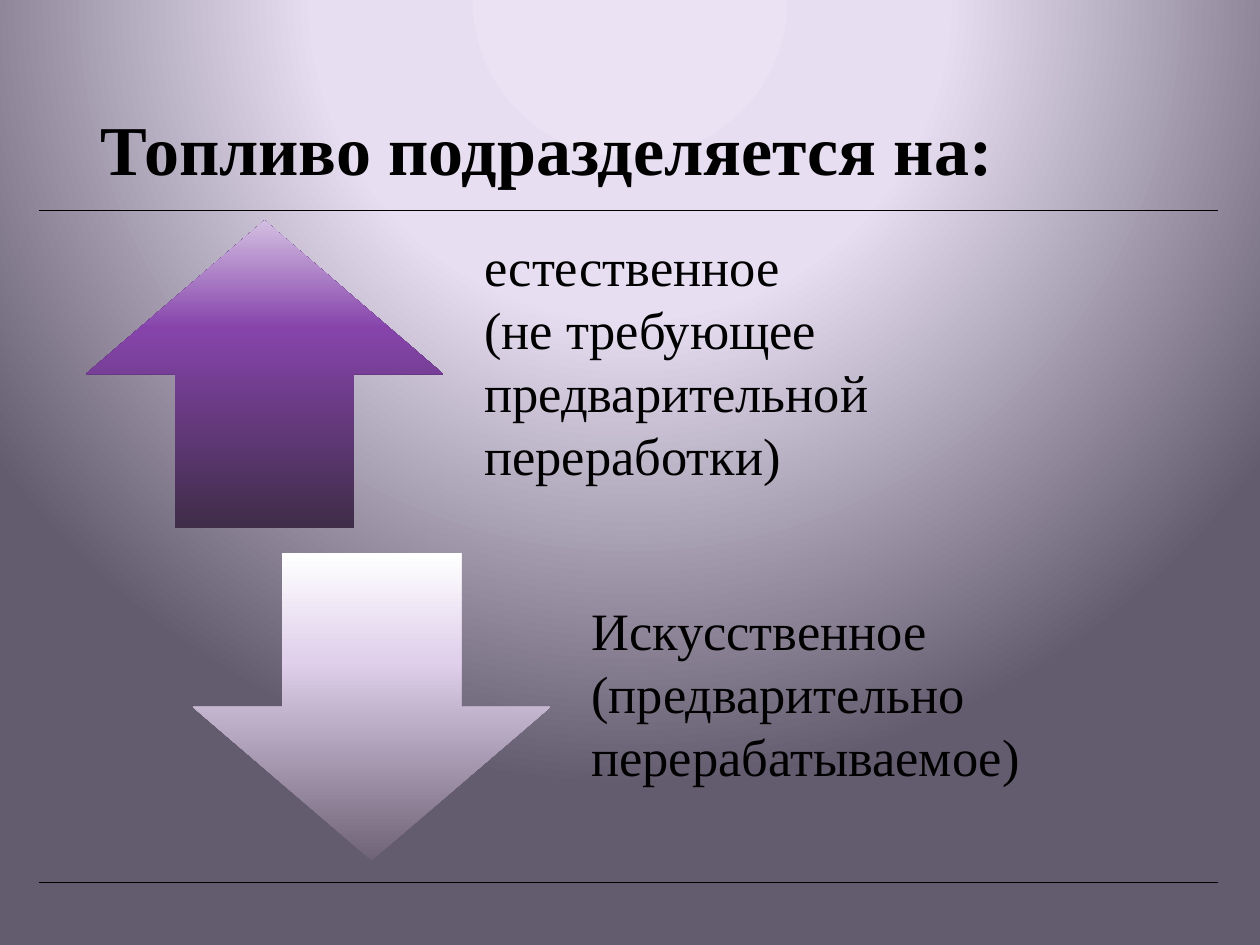
import dataclasses

import pptx
import pptx.dml.color
import pptx.enum.shapes
import pptx.enum.text
import pptx.oxml
import pptx.oxml.ns
import pptx.util

COLUMNS, ROWS = 100, 75
CELL = pptx.util.Inches(0.1)
ARROWS = pptx.enum.shapes.MSO_SHAPE
ANCHORS = pptx.enum.text.MSO_ANCHOR


@dataclasses.dataclass(frozen=True)
class Theme:
    font: str = "Times New Roman"
    ink: str = "000000"
    title_size: float = 40
    body_size: float = 30
    body_leading: float = 36
    rule_width: float = 0.25
    backdrop: tuple = ((0, "EBE3F4"), (40, "E7DEF2"), (100, "635B6E"))
    natural: tuple = ((0, "3F2D49"), (65, "8644AB"), (100, "D3BEE1"))
    artificial: tuple = ((0, "6F6377"), (65, "E0D0EB"), (100, "FFFFFF"))


@dataclasses.dataclass(frozen=True)
class Box:
    left: float
    top: float
    width: float
    height: float

    def columns(self, start, share):
        return Box(self.left + start * self.width, self.top, share * self.width, self.height)

    def emu(self):
        return [round(n * CELL) for n in (self.left, self.top, self.width, self.height)]


THEME = Theme()


def gradient_xml(stops, direction):
    colours = "".join(
        f'<a:gs pos="{share * 1000}"><a:srgbClr val="{colour}"/></a:gs>'
        for share, colour in stops
    )
    return (
        f'<a:gradFill {pptx.oxml.ns.nsdecls("a")} rotWithShape="1">'
        f"<a:gsLst>{colours}</a:gsLst>{direction}</a:gradFill>"
    )


def paint_backdrop(slide):
    glow = (
        '<a:path path="circle">'
        '<a:fillToRect l="50000" t="-80000" r="50000" b="180000"/></a:path>'
    )
    backdrop = pptx.oxml.parse_xml(
        f'<p:bg {pptx.oxml.ns.nsdecls("p", "a")}><p:bgPr>'
        f"{gradient_xml(THEME.backdrop, glow)}<a:effectLst/></p:bgPr></p:bg>"
    )
    slide.element.cSld.insert(0, backdrop)


def add_rules(shapes, frame):
    left, top, width, height = frame.emu()
    for level in (top, top + height):
        rule = shapes.add_connector(
            pptx.enum.shapes.MSO_CONNECTOR.STRAIGHT, left, level, left + width, level
        )
        rule.line.color.rgb = pptx.dml.color.RGBColor.from_string(THEME.ink)
        rule.line.width = pptx.util.Pt(THEME.rule_width)
        rule.element.spPr.append(
            pptx.oxml.parse_xml(f'<a:effectLst {pptx.oxml.ns.nsdecls("a")}/>')
        )


def add_text(shapes, box, lines, size, anchor, bold=False, leading=None):
    frame = shapes.add_textbox(*box.emu()).text_frame
    frame.word_wrap = True
    frame.vertical_anchor = anchor
    for index, line in enumerate(lines):
        paragraph = frame.add_paragraph() if index else frame.paragraphs[0]
        if leading:
            paragraph.line_spacing = pptx.util.Pt(leading)
        run = paragraph.add_run()
        run.text = line
        run.font.name = THEME.font
        run.font.size = pptx.util.Pt(size)
        run.font.bold = bold
        run.font.color.rgb = pptx.dml.color.RGBColor.from_string(THEME.ink)
    return frame


def add_title(shapes, box, wording):
    add_text(shapes, box, [wording], THEME.title_size, ANCHORS.BOTTOM, bold=True)


def add_fuel_kind(shapes, box, arrow_kind, stops, lines):
    arrow = shapes.add_shape(arrow_kind, *box.columns(0, 0.366).emu())
    arrow.shadow.inherit = False
    arrow.line.fill.background()
    arrow.fill.background()
    properties = arrow.element.spPr
    plain = properties.find(pptx.oxml.ns.qn("a:noFill"))
    upward = '<a:lin ang="16200000" scaled="0"/>'
    properties.replace(plain, pptx.oxml.parse_xml(gradient_xml(stops, upward)))

    frame = add_text(
        shapes, box.columns(0.378, 0.622), lines,
        THEME.body_size, ANCHORS.MIDDLE, leading=THEME.body_leading,
    )
    frame.margin_left = frame.margin_right = frame.margin_bottom = pptx.util.Inches(0.23)
    frame.margin_top = 0


def add_fuel_kinds(shapes, box):
    width, height, step = 77.6, 24.4, 26.4
    kinds = (
        (ARROWS.UP_ARROW, THEME.natural,
         ("естественное", "(не требующее предварительной переработки)")),
        (ARROWS.DOWN_ARROW, THEME.artificial,
         ("Искусственное", "(предварительно перерабатываемое)")),
    )
    group = shapes.add_group_shape()
    for index, (arrow_kind, stops, lines) in enumerate(kinds):
        indent = index * (box.width - width)
        place = Box(box.left + indent, box.top + index * step, width, height)
        add_fuel_kind(group.shapes, place, arrow_kind, stops, lines)


def main():
    deck = pptx.Presentation()
    deck.slide_width, deck.slide_height = COLUMNS * CELL, ROWS * CELL
    slide = deck.slides.add_slide(deck.slide_layouts[6])
    paint_backdrop(slide)
    add_rules(slide.shapes, Box(3.1, 16.7, 93.6, 53.3))
    add_title(slide.shapes, Box(7, 5.3, 85.9, 10.2), "Топливо подразделяется на:")
    add_fuel_kinds(slide.shapes, Box(6.8, 17.5, 86.1, 50.8))
    deck.save("out.pptx")


if __name__ == "__main__":
    main()
